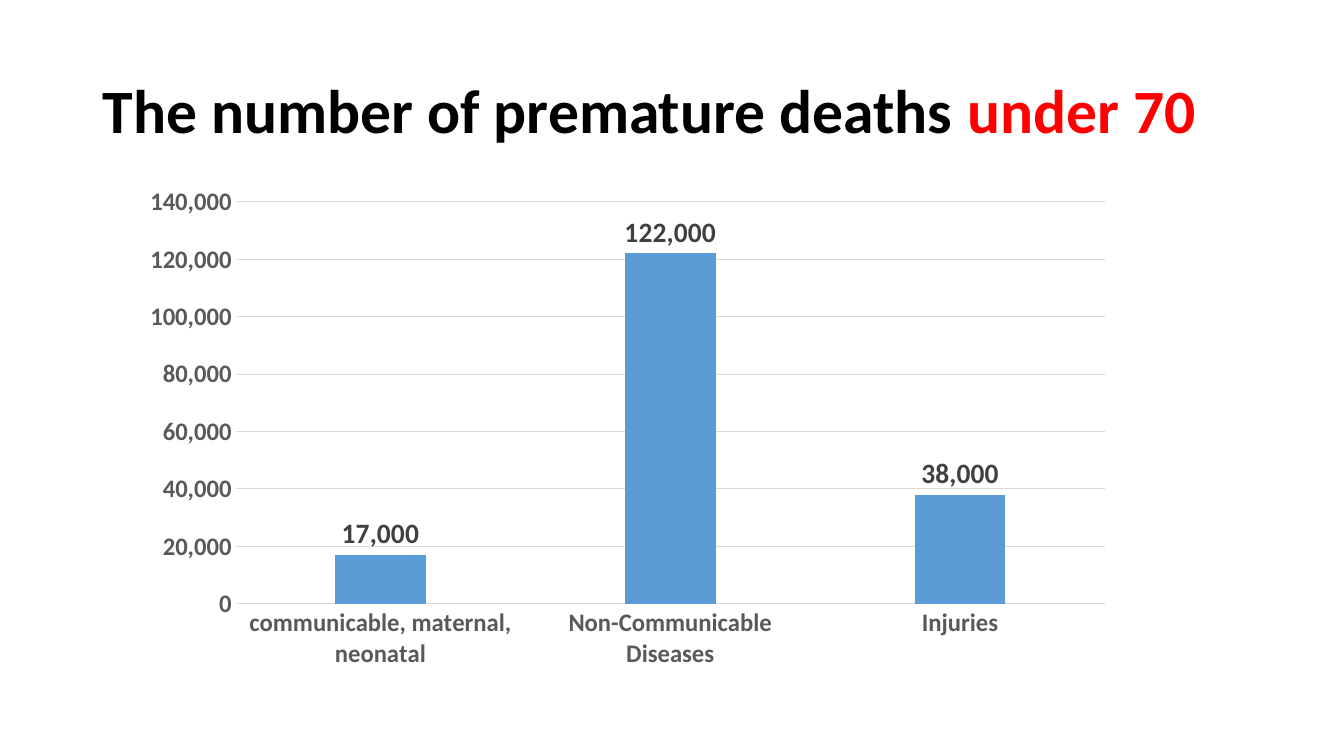
from lxml import etree
from pptx import Presentation
from pptx.chart.data import CategoryChartData
from pptx.dml.color import RGBColor
from pptx.enum import chart as ch, text
from pptx.util import Pt

PX = 9144  # 100 px to the inch


def style(font, size, color):
    font.name, font.size, font.bold = "Calibri", Pt(size), True
    font.color.rgb = RGBColor.from_string(color)


def box(*sides):
    return [side * PX for side in sides]


prs = Presentation()
prs.slide_width, prs.slide_height = box(1333, 750)
slide = prs.slides.add_slide(prs.slide_layouts[5])

# Title
title = slide.shapes.title
title.left, title.top, title.width, title.height = box(92, 40, 1150, 145)
frame = title.text_frame
frame.word_wrap = True
frame.auto_size = text.MSO_AUTO_SIZE.NONE
frame.vertical_anchor = text.MSO_ANCHOR.MIDDLE
para = frame.paragraphs[0]
para.alignment = text.PP_ALIGN.LEFT
para.line_spacing = 0.9
for words, color in [("The number of premature deaths ", "000000"), ("under 70", "FF0000")]:
    run = para.add_run()
    run.text = words
    style(run.font, 44, color)

# Chart
data = CategoryChartData(number_format="#,##0")
data.categories = ["communicable, maternal, neonatal", "Non-Communicable Diseases", "Injuries"]
data.add_series("Series 1", [17000, 122000, 38000])
chart = slide.shapes.add_chart(
    ch.XL_CHART_TYPE.COLUMN_CLUSTERED, *box(149, 185, 963, 505), data).chart
chart.has_title = chart.has_legend = False
chart.font.name, chart.font.size = "Calibri", Pt(10)

cats, vals = chart.category_axis, chart.value_axis
for axis in (cats, vals):
    axis.major_tick_mark = axis.minor_tick_mark = ch.XL_TICK_MARK.NONE
    style(axis.tick_labels.font, 18, "595959")
vals.minimum_scale, vals.maximum_scale, vals.major_unit = 0, 140000, 20000
vals.tick_labels.number_format = "#,##0"
vals.tick_labels.number_format_is_linked = False
vals.format.line.fill.background()
for line in (cats.format.line, vals.major_gridlines.format.line):
    line.color.rgb = RGBColor.from_string("D9D9D9")
    line.width = Pt(0.75)

plot = chart.plots[0]
plot.gap_width, plot.overlap = 219, -27
plot.vary_by_categories = False
bars = plot.series[0]
bars.format.fill.solid()
bars.format.fill.fore_color.rgb = RGBColor.from_string("5B9BD5")
labels = bars.data_labels
labels.show_value = True
labels.position = ch.XL_LABEL_POSITION.OUTSIDE_END
labels.number_format, labels.number_format_is_linked = "#,##0", False
style(labels.font, 20, "404040")

# Fixed inner plot area
area = chart.element.chart.plotArea
ns = area.nsmap["c"]
for old in area.findall(f"{{{ns}}}layout"):
    area.remove(old)
layout = etree.Element(f"{{{ns}}}layout")
manual = etree.SubElement(layout, f"{{{ns}}}manualLayout")
for tag, val in [("layoutTarget", "inner"), ("xMode", "edge"), ("yMode", "edge"),
                 ("x", "0.068"), ("y", "0.03"), ("w", "0.915"), ("h", "0.79")]:
    etree.SubElement(manual, f"{{{ns}}}{tag}", val=val)
area.insert(0, layout)

prs.save("out.pptx")
